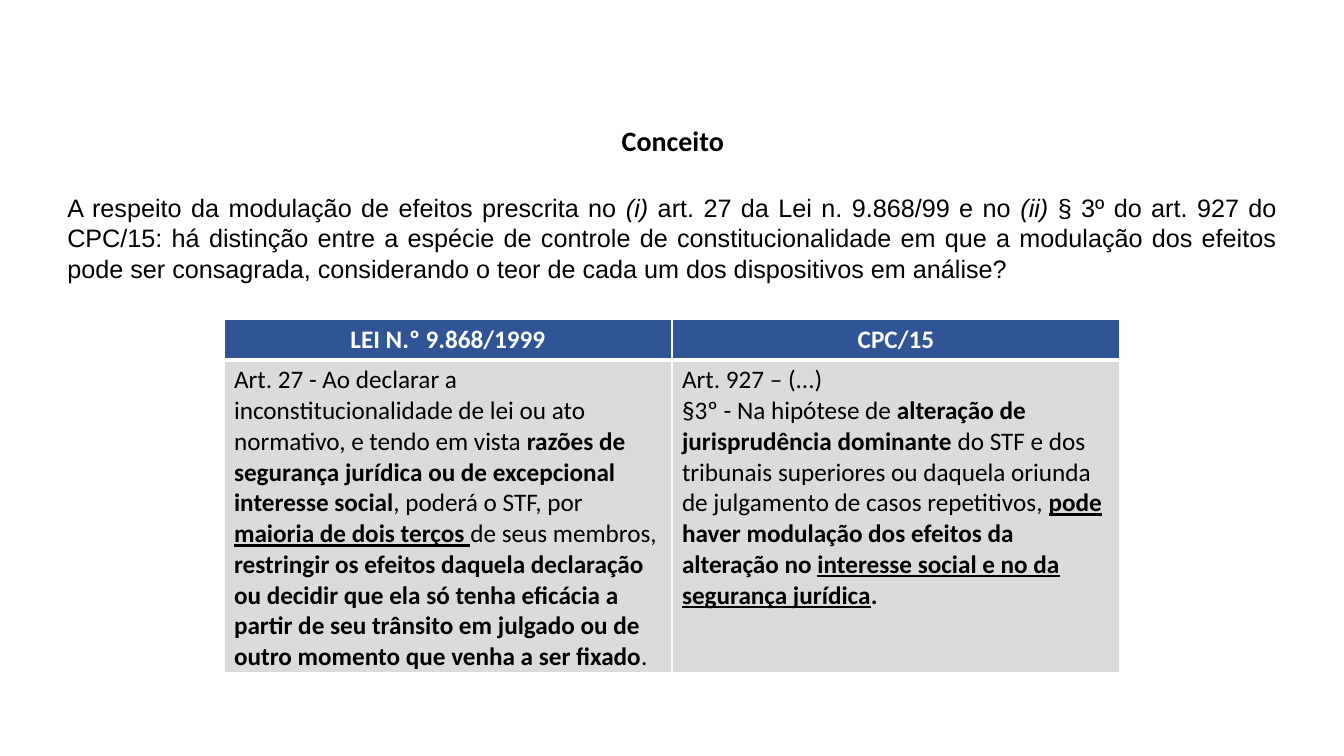
from lxml import etree
from pptx import Presentation
from pptx.dml.color import RGBColor
from pptx.enum.text import PP_ALIGN
from pptx.oxml.ns import qn
from pptx.util import Pt

LEFT, CENTER, JUSTIFY = PP_ALIGN.LEFT, PP_ALIGN.CENTER, PP_ALIGN.JUSTIFY
BLACK = RGBColor(0x00, 0x00, 0x00)
WHITE = RGBColor(0xFF, 0xFF, 0xFF)
BLUE = RGBColor(0x2F, 0x55, 0x97)
GREY = RGBColor(0xDB, 0xDB, 0xDB)

# Each paragraph is a list of (text, style) runs; style letters: b, i, u.
TITLE = [[("Conceito", "b")]]
QUESTION = [[
    ("A respeito da modulação de efeitos prescrita no ", ""),
    ("(i)", "i"),
    (" art. 27 da Lei n. 9.868/99 e no ", ""),
    ("(ii)", "i"),
    (" § 3º do art. 927 do CPC/15: há distinção entre a espécie de controle de "
     "constitucionalidade em que a modulação dos efeitos pode ser consagrada, "
     "considerando o teor de cada um dos dispositivos em análise?", ""),
]]
HEADERS = [[[("LEI N.º 9.868/1999", "b")]], [[("CPC/15", "b")]]]
ART_27 = [[
    ("Art. 27 - Ao declarar a inconstitucionalidade de lei ou ato normativo, "
     "e tendo em vista ", ""),
    ("razões de segurança jurídica ou de excepcional interesse social", "b"),
    (", poderá o STF, por ", ""),
    ("maioria de dois terços ", "bu"),
    ("de seus membros, ", ""),
    ("restringir os efeitos daquela declaração ou decidir que ela só tenha "
     "eficácia a partir de seu trânsito em julgado ou de outro momento que "
     "venha a ser fixado", "b"),
    (".", ""),
]]
ART_927 = [
    [("Art. 927 – (...)", "")],
    [
        ("§3º - Na hipótese de ", ""),
        ("alteração de jurisprudência dominante ", "b"),
        ("do STF e dos tribunais superiores ou daquela oriunda de julgamento "
         "de casos repetitivos, ", ""),
        ("pode", "bu"),
        (" haver modulação dos efeitos da alteração no ", "b"),
        ("interesse social e no da segurança jurídica", "bu"),
        (".", "b"),
    ],
]


def write(tf, paragraphs, font, size, color, align):
    for i, runs in enumerate(paragraphs):
        p = tf.add_paragraph() if i else tf.paragraphs[0]
        p.alignment = align
        for text, style in runs:
            r = p.add_run()
            r.text = text
            r.font.name, r.font.size = font, Pt(size)
            r.font.color.rgb = color
            r.font.bold = "b" in style
            r.font.italic = "i" in style
            r.font.underline = "u" in style


def add_text(s, box, paragraphs, font, size, align):
    tf = s.shapes.add_textbox(*map(Pt, box)).text_frame
    tf.word_wrap = True
    write(tf, paragraphs, font, size, BLACK, align)


def set_borders(cell, **widths):
    """Draw white borders; they must come before the fill in the cell XML."""
    tc_pr = cell._tc.get_or_add_tcPr()
    for i, (side, width) in enumerate(widths.items()):
        ln = etree.Element(qn(f"a:ln{side}"), w=str(Pt(width)))
        fill = etree.SubElement(ln, qn("a:solidFill"))
        etree.SubElement(fill, qn("a:srgbClr"), val=str(WHITE))
        tc_pr.insert(i, ln)


def add_comparison(s, box, header_height):
    left, top, width, height = box
    rows = [(HEADERS, header_height, BLUE, WHITE, CENTER, 1, 3),
            ([ART_27, ART_927], height - header_height, GREY, BLACK, LEFT, 3, 1)]
    table = s.shapes.add_table(len(rows), len(HEADERS), *map(Pt, box)).table
    for col in table.columns:
        col.width = Pt(width / len(HEADERS))
    for i, (texts, row_height, fill, color, align, above, below) in enumerate(rows):
        table.rows[i].height = Pt(row_height)
        for j, paragraphs in enumerate(texts):
            cell = table.cell(i, j)
            cell.fill.solid()
            cell.fill.fore_color.rgb = fill
            set_borders(cell, L=1, R=1, T=above, B=below)
            write(cell.text_frame, paragraphs, "Calibri", 18, color, align)


def main():
    prs = Presentation()
    prs.slide_width, prs.slide_height = Pt(960), Pt(540)
    s = prs.slides.add_slide(prs.slide_layouts[6])
    add_text(s, (41, 134, 878, 94), QUESTION, "Arial", 18, JUSTIFY)
    add_text(s, (437, 85, 101, 32), TITLE, "Calibri", 20, LEFT)
    add_comparison(s, (160, 228, 640, 252), 29)
    prs.save("out.pptx")


if __name__ == "__main__":
    main()
